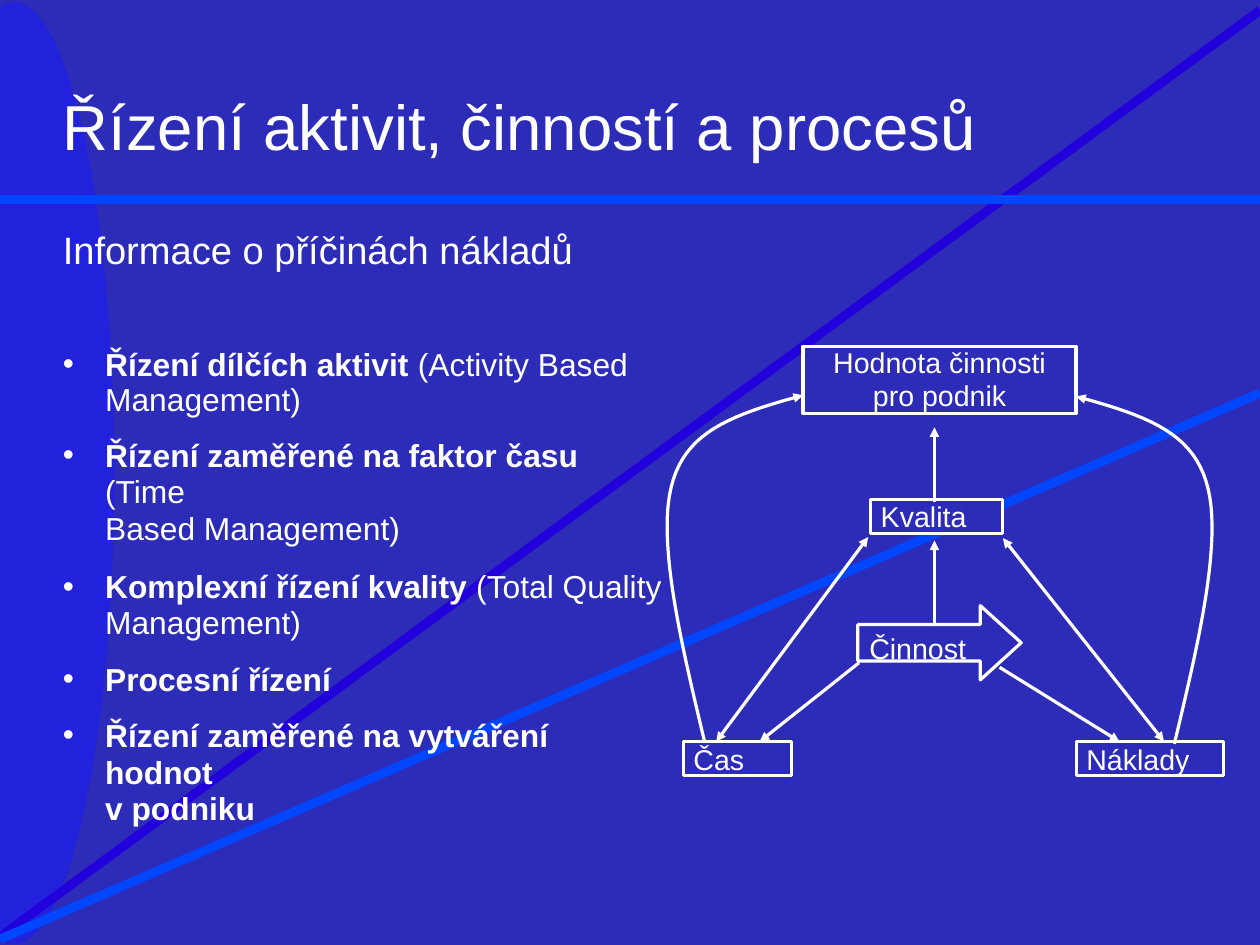
from dataclasses import dataclass
from math import asin, cos, pi, sin

from lxml.etree import SubElement
from pptx import Presentation
from pptx.dml.color import RGBColor
from pptx.enum.shapes import MSO_CONNECTOR, MSO_SHAPE
from pptx.enum.text import MSO_ANCHOR, PP_ALIGN
from pptx.oxml.ns import qn
from pptx.util import Inches, Pt

Point = tuple[float, float]
WHITE, BACK, OVAL, PURPLE, BLUE = "FFFFFF", "2C2CB8", "2222DC", "2200DC", "0046FF"
WIDTH, HEIGHT = 11.03, 8.27


@dataclass
class Line:
    start: Point
    end: Point
    color: str = WHITE
    width: float = 2
    head: bool = False
    tail: bool = False


@dataclass
class Box:
    text: str
    left: float
    top: float
    width: float
    height: float
    indent: float = 0.09
    align: PP_ALIGN = PP_ALIGN.LEFT
    spacing: float | None = None


@dataclass
class Item:
    bold: str = ""
    plain: str = ""
    spacing: float | None = 23.1
    before: float = 0
    bullet: bool = True
    right: float = 0


def rgb(color: str) -> RGBColor:
    return RGBColor.from_string(color)


def add_text(p, text: str, *, size: float = 18, bold: bool = False,
             color: str = WHITE) -> None:
    r = p.add_run()
    r.text = text
    r.font.name = "Arial"
    r.font.size = Pt(size)
    r.font.bold = bold
    r.font.color.rgb = rgb(color)


def plain_frame(s):
    tf = s.text_frame
    tf.word_wrap = True
    tf.vertical_anchor = MSO_ANCHOR.TOP
    tf.margin_left = tf.margin_top = tf.margin_right = tf.margin_bottom = 0
    return tf


def text_box(shapes, left: float, top: float, width: float, height: float):
    return plain_frame(shapes.add_textbox(Inches(left), Inches(top),
                                          Inches(width), Inches(height)))


def style(s, fill: str | None, line: str | None, width: float = 2) -> None:
    s.shadow.inherit = False
    if fill:
        s.fill.solid()
        s.fill.fore_color.rgb = rgb(fill)
    else:
        s.fill.background()
    if line:
        s.line.color.rgb = rgb(line)
        s.line.width = Pt(width)
    else:
        s.line.fill.background()


def add_arrowhead(s, tag: str) -> None:
    SubElement(s.line._get_or_add_ln(), qn(tag), type="triangle")


def draw_line(shapes, line: Line) -> None:
    s = shapes.add_connector(MSO_CONNECTOR.STRAIGHT,
                             *(Inches(v) for v in line.start + line.end))
    s.line.color.rgb = rgb(line.color)
    s.line.width = Pt(line.width)
    if line.head:
        add_arrowhead(s, "a:headEnd")
    if line.tail:
        add_arrowhead(s, "a:tailEnd")
    SubElement(s._element.spPr, qn("a:effectLst"))


def draw_path(shapes, points: list[Point], close: bool):
    # Lengths go in as whole EMU, since the builder rounds its coordinates
    corners = [(Inches(x), Inches(y)) for x, y in points]
    builder = shapes.build_freeform(*corners[0])
    builder.add_line_segments(corners[1:], close=close)
    return builder.convert_to_shape()


def bezier(a: Point, b: Point, c: Point, d: Point, steps: int = 24) -> list[Point]:
    def at(t: float, i: int) -> float:
        u = 1 - t
        return u**3 * a[i] + 3 * u * u * t * b[i] + 3 * u * t * t * c[i] + t**3 * d[i]
    return [(at(k / steps, 0), at(k / steps, 1)) for k in range(steps + 1)]


def draw_box(shapes, box: Box) -> None:
    s = shapes.add_shape(MSO_SHAPE.RECTANGLE, Inches(box.left), Inches(box.top),
                         Inches(box.width), Inches(box.height))
    style(s, BACK, WHITE)
    tf = plain_frame(s)
    tf.margin_left = Inches(box.indent)
    for i, text in enumerate(box.text.split("\n")):
        p = tf.add_paragraph() if i else tf.paragraphs[0]
        p.alignment = box.align
        if box.spacing:
            p.line_spacing = Pt(box.spacing)
        add_text(p, text)


def draw_item(p, item: Item) -> None:
    if item.spacing:
        p.line_spacing = Pt(item.spacing)
    p.space_before = Pt(item.before)
    pPr = p._p.get_or_add_pPr()
    pPr.set("marL", str(Inches(0.38)))
    pPr.set("marR", str(Inches(item.right)))
    pPr.set("indent", str(Inches(-0.37 if item.bullet else 0)))
    if item.bullet:
        SubElement(pPr, qn("a:buFont"), typeface="Arial")
        SubElement(pPr, qn("a:buChar"), char="•")
    if item.bold:
        add_text(p, item.bold, size=20, bold=True)
    if item.plain:
        add_text(p, item.plain, size=20)


BACKDROP_LINES = [
    Line((WIDTH, 0.09), (0, 8.2), PURPLE, 5.67),
    Line((WIDTH, 1.75), (0, 1.75), BLUE, 5.67),
    Line((WIDTH, 3.44), (0, 8.22), BLUE, 5.67),
]
ITEMS = [
    Item("Řízení dílčích aktivit ", "(Activity Based Management)", 22.3),
    Item("Řízení zaměřené na faktor času ", "(Time", before=11.8, right=0.2),
    Item(plain="Based Management)", bullet=False),
    Item("Komplexní řízení kvality ", "(Total Quality Management)", 22.3, 14.5),
    Item("Procesní řízení", spacing=None, before=11.9),
    Item("Řízení zaměřené na vytváření hodnot", before=12.2, right=0.2),
    Item("v podniku", bullet=False),
]
BOXES = [
    Box("Čas", 5.98, 6.49, 0.95, 0.3),
    Box("Kvalita", 7.62, 4.37, 1.16, 0.3),
    Box("Náklady", 9.42, 6.49, 1.29, 0.3),
    Box("Hodnota činnosti\npro podnik", 7.03, 3.03, 2.39, 0.59, 0, PP_ALIGN.CENTER, 20.9),
]
ARROWS = [
    Line((7.6, 4.7), (6.27, 6.49), head=True, tail=True),
    Line((8.78, 4.71), (10.19, 6.49), head=True, tail=True),
    Line((8.18, 5.48), (8.18, 4.73), tail=True),
    Line((8.18, 4.39), (8.18, 3.74), tail=True),
    Line((7.52, 5.8), (6.65, 6.49), tail=True),
    Line((8.75, 5.84), (9.8, 6.49), tail=True),
]


def main() -> None:
    prs = Presentation()
    prs.slide_width, prs.slide_height = Inches(WIDTH), Inches(HEIGHT)
    slide = prs.slides.add_slide(prs.slide_layouts[6])
    shapes = slide.shapes

    # Backdrop: ellipse cut by the left edge, and crossing lines
    slide.background.fill.solid()
    slide.background.fill.fore_color.rgb = rgb(BACK)
    reach = pi / 2 + asin(0.13 / 0.87)
    angles = [reach * k / 40 for k in range(-40, 41)]
    oval = [(0.13 + 0.87 * cos(a), 4.14 + 4.12 * sin(a)) for a in angles]
    style(draw_path(shapes, oval, True), OVAL, None)
    for line in BACKDROP_LINES:
        draw_line(shapes, line)

    # Headings
    add_text(text_box(shapes, 0.55, 0.76, 9.95, 0.68).paragraphs[0],
             "Řízení aktivit, činností a procesů", size=40)
    add_text(text_box(shapes, 0.55, 1.98, 4.7, 0.4).paragraphs[0],
             "Informace o příčinách nákladů", size=24)

    # Bulleted list
    tf = text_box(shapes, 0.54, 3.04, 5.31, 4.2)
    for i, item in enumerate(ITEMS):
        draw_item(tf.add_paragraph() if i else tf.paragraphs[0], item)

    # Activity block arrow with its label
    s = shapes.add_shape(MSO_SHAPE.RIGHT_ARROW, Inches(7.51), Inches(5.3),
                         Inches(1.43), Inches(0.65))
    s.adjustments[0], s.adjustments[1] = 0.49, 0.55
    style(s, None, WHITE)
    add_text(text_box(shapes, 7.61, 5.52, 0.95, 0.3).paragraphs[0], "Činnost")

    # Boxes and straight arrows
    for box in BOXES:
        draw_box(shapes, box)
    for arrow in ARROWS:
        draw_line(shapes, arrow)

    # Curved arrows, mirrored about the middle of the diagram
    left = (bezier((6.17, 6.5), (5.99, 5.75), (5.84, 5.1), (5.84, 4.6))
            + bezier((5.84, 4.6), (5.84, 3.85), (6.25, 3.67), (7.03, 3.46))[1:])
    for curve in (left, [(16.45 - x, y + 0.01) for x, y in left]):
        s = draw_path(shapes, curve, False)
        style(s, None, WHITE)
        add_arrowhead(s, "a:tailEnd")

    prs.save("out.pptx")


if __name__ == "__main__":
    main()
